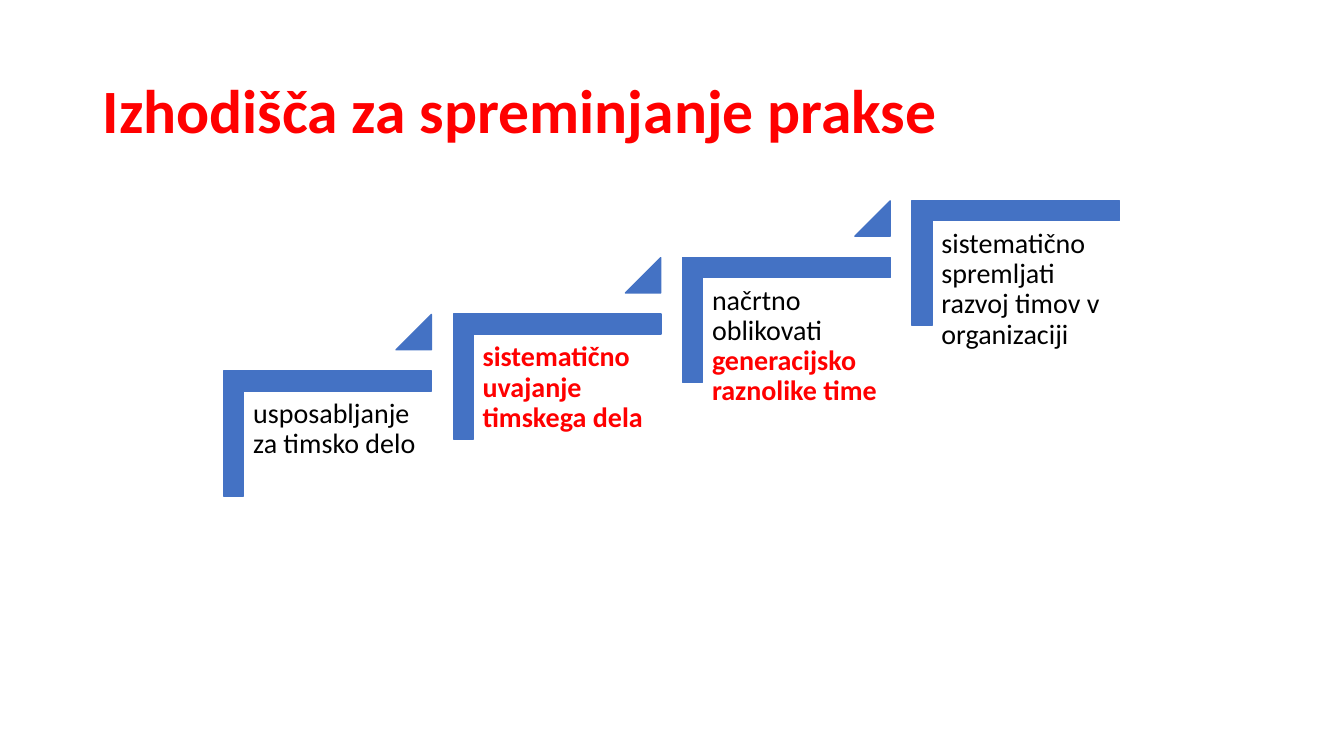
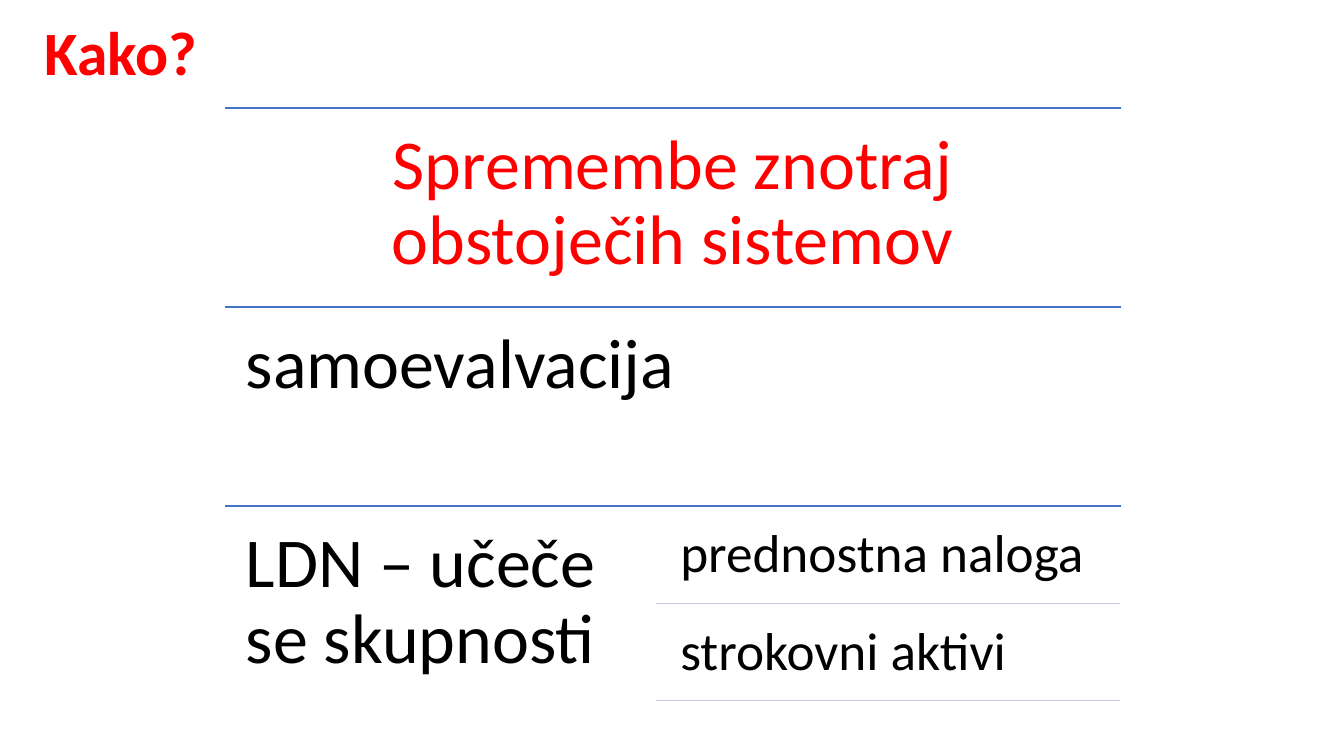
from pptx import Presentation
from pptx import util as u
from pptx.dml.color import RGBColor
from pptx.enum import shapes, text
from pptx.oxml.ns import qn
from lxml import etree

RED, BLACK, BLUE, PALE = "FF0000", "000000", "4472C4", "C1C9E4"


def color(code):
    return RGBColor.from_string(code)


def write(box, *spans, size=20, ink=BLACK, bold=False, inset=None,
          align=text.PP_ALIGN.LEFT, anchor=text.MSO_ANCHOR.TOP):
    frame = box.text_frame
    frame.word_wrap = True
    frame.vertical_anchor = anchor
    if inset is not None:
        frame.margin_left = frame.margin_right = u.Pt(inset)
        frame.margin_top = frame.margin_bottom = u.Pt(inset)
    para = frame.paragraphs[0]
    para.alignment = align
    para.line_spacing = 0.9
    for words, accent in spans:
        span = para.add_run()
        span.text = words
        span.font.name = "Calibri"
        span.font.size = u.Pt(size)
        span.font.bold = bold or accent
        span.font.color.rgb = color(RED if accent else ink)


class Board:
    """Draws on the current slide over a grid of 100 columns and 100 rows."""

    def __init__(self):
        self.deck = Presentation()
        self.deck.slide_width = u.Inches(13.33)
        self.deck.slide_height = u.Inches(7.5)
        self.page = None

    def cells(self, left, top, width, height):
        column = self.deck.slide_width / 100
        row = self.deck.slide_height / 100
        return (round(left * column), round(top * row),
                round(width * column), round(height * row))

    def new_page(self, title, *place):
        self.page = self.deck.slides.add_slide(self.deck.slide_layouts[6])
        self.label(place, (title, True), size=44, anchor=text.MSO_ANCHOR.MIDDLE)

    def label(self, place, *spans, **style):
        box = self.page.shapes.add_textbox(*self.cells(*place))
        write(box, *spans, **style)

    def solid(self, kind, place, *adjustments):
        shape = self.page.shapes.add_shape(kind, *place)
        for index, value in enumerate(adjustments):
            shape.adjustments[index] = value
        shape.shadow.inherit = False
        shape.fill.solid()
        shape.fill.fore_color.rgb = color(BLUE)
        shape.line.color.rgb = color(BLUE)
        shape.line.width = u.Pt(1)
        return shape

    def bracket(self, *place):
        left, top, width, height = self.cells(*place)
        shift = (width - height) // 2
        turned = left + shift, top - shift, height, width
        shape = self.solid(shapes.MSO_SHAPE.CORNER, turned, 0.16, 0.16)
        shape.rotation = 90

    def wedge(self, *place):
        self.solid(shapes.MSO_SHAPE.ISOSCELES_TRIANGLE, self.cells(*place), 1)

    def rule(self, left, top, width, ink):
        x, y, length, _ = self.cells(left, top, width, 0)
        line = self.page.shapes.add_connector(
            shapes.MSO_CONNECTOR.STRAIGHT, x, y, x + length, y)
        line.line.color.rgb = color(ink)
        line.line.width = u.Pt(1)
        etree.SubElement(line._element.spPr, qn("a:effectLst"))


def draw_stairs(board):
    board.new_page("Izhodišča za spreminjanje prakse", 6.9, 5.33, 86.25, 19.33)
    steps = [
        [("usposabljanje za timsko delo", False)],
        [("sistematično uvajanje timskega dela", True)],
        [("načrtno oblikovati ", False), ("generacijsko raznolike time", True)],
        [("sistematično spremljati razvoj timov v organizaciji", False)],
    ]
    width, wedge = 15.45, 2.63
    for index, spans in enumerate(steps):
        left, top = 16.65 + 17.07 * index, 49.07 - 7.51 * index
        board.bracket(left, top, width, 16.53)
        board.label((left + 1.56, top + 2.67, 13.95, 21.73), *spans, inset=6)
        if index < len(steps) - 1:
            board.wedge(left + width - wedge, top - 7.47, wedge, 4.67)


def draw_systems(board):
    board.new_page("Kako?", 2.55, 2, 86.25, 10.67)
    left, top, width, pitch = 16.72, 14.27, 66.67, 26.33
    center, start = text.PP_ALIGN.CENTER, text.PP_ALIGN.LEFT
    bands = [
        ("Spremembe znotraj obstoječih sistemov", RED, width, center),
        ("samoevalvacija", BLACK, width, start),
        ("LDN – učeče se skupnosti", BLACK, 32.1, start),
    ]
    for index, (words, ink, span, align) in enumerate(bands):
        y = top + pitch * index
        board.rule(left, y, width, BLUE)
        board.label((left, y, span, pitch), (words, False),
                    size=50, ink=ink, align=align, inset=15)
    for index, words in enumerate(["prednostna naloga", "strokovni aktivi"]):
        y = 67.6 + 12.87 * index
        board.label((49.43, y, 33.9, 12.27), (words, False), size=38, inset=11.4)
        board.rule(48.83, y + 12.2, 34.5, PALE)


def main():
    board = Board()
    draw_stairs(board)
    draw_systems(board)
    board.deck.save("out.pptx")


if __name__ == "__main__":
    main()
